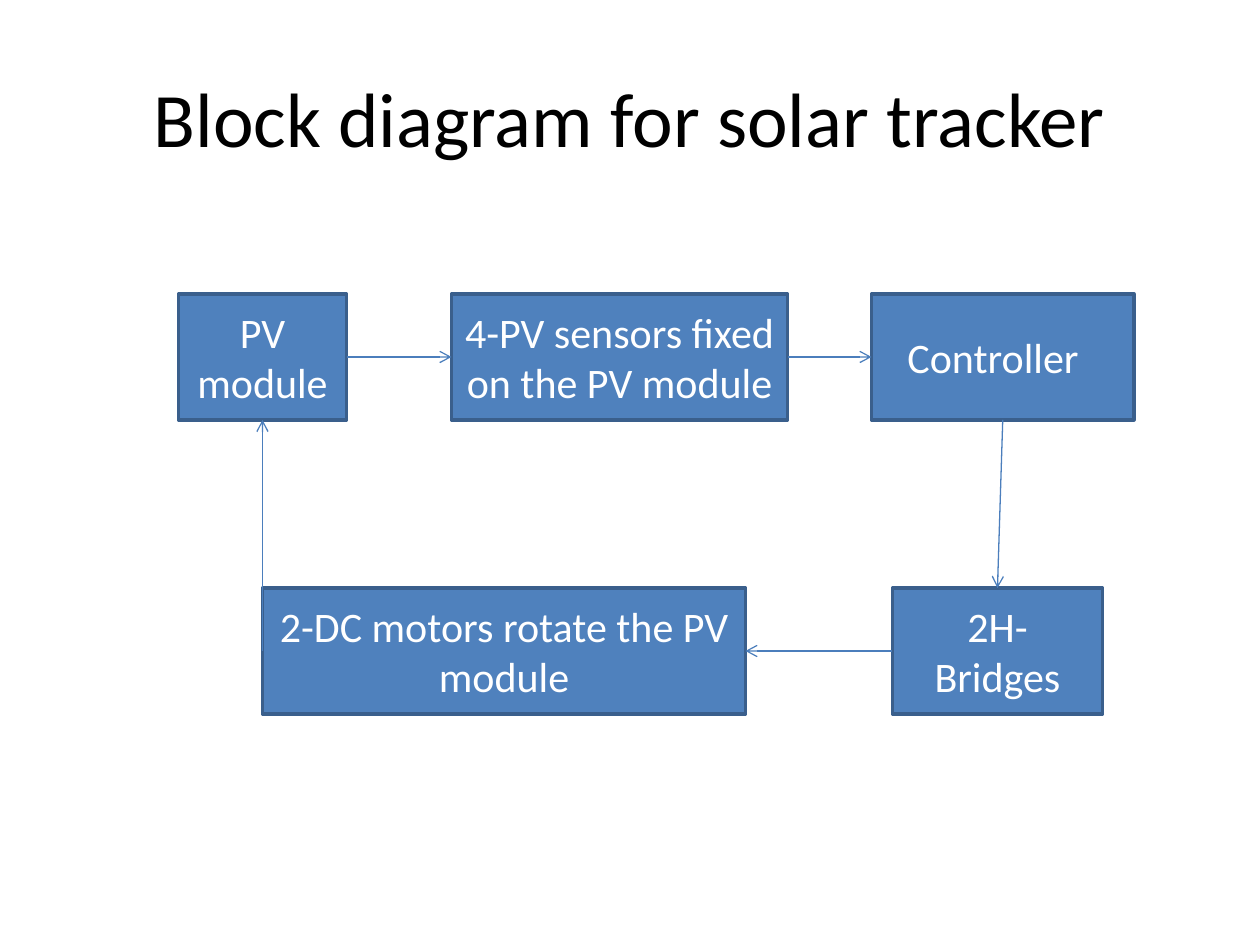
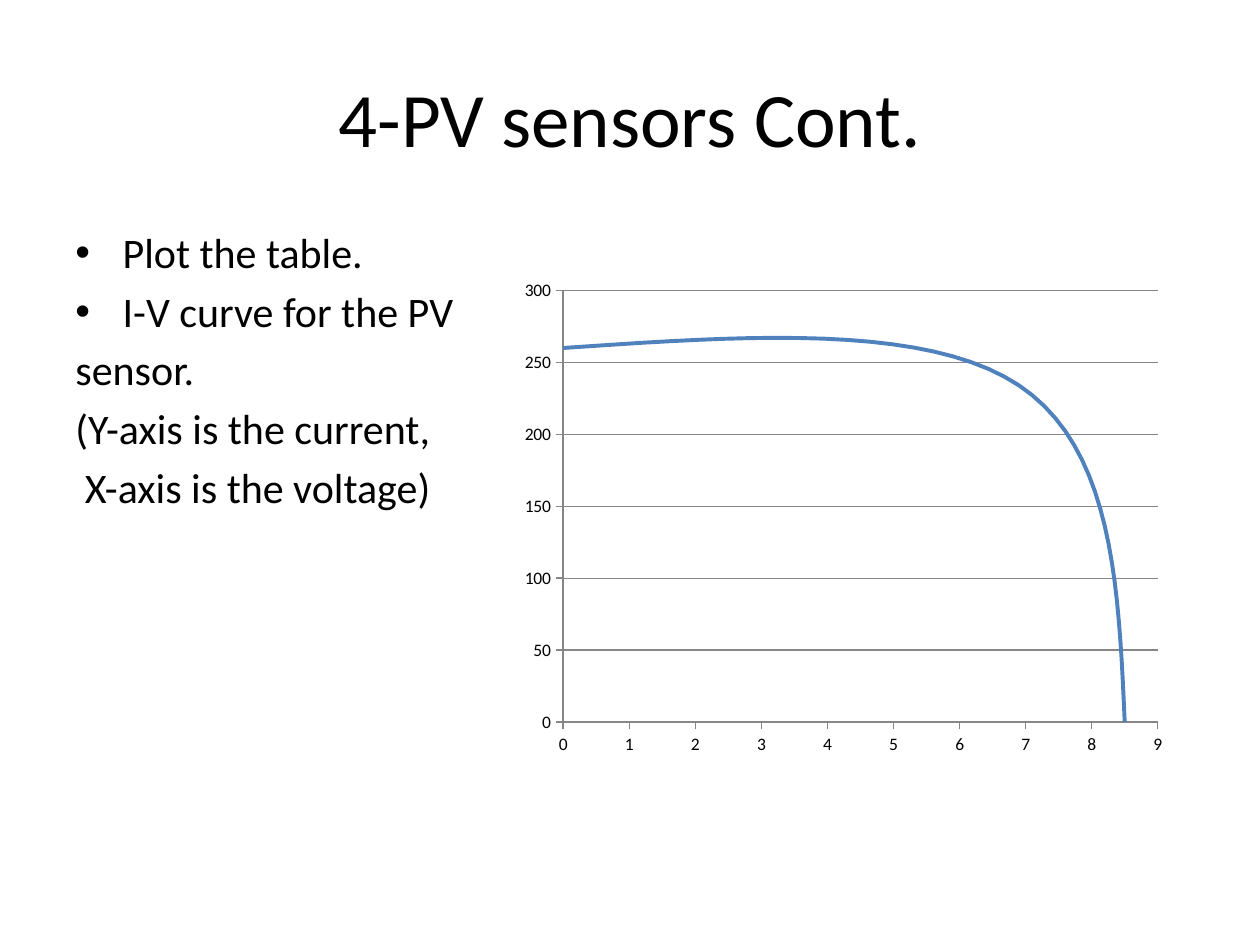
from dataclasses import dataclass

from lxml.etree import SubElement
from pptx import Presentation
from pptx.chart.data import XyChartData
from pptx.dml.color import RGBColor as RGB
from pptx.enum.chart import XL_CHART_TYPE as ChartType, XL_TICK_MARK as TickMark
from pptx.enum.shapes import MSO_CONNECTOR as Connector, MSO_SHAPE as Shape
from pptx.enum.text import MSO_ANCHOR as Anchor, PP_ALIGN as Align
from pptx.oxml.ns import qn
from pptx.util import Pt


@dataclass(frozen=True)
class Theme:
    font: str = "Calibri"
    bullet_font: str = "Arial"
    title_size: int = 44
    body_size: int = 24
    chart_size: int = 10
    text: RGB = RGB(0, 0, 0)
    block_text: RGB = RGB(255, 255, 255)
    block: RGB = RGB.from_string("4F81BD")
    block_edge: RGB = RGB.from_string("3A5F8C")
    arrow: RGB = RGB.from_string("4B7EBC")
    axis: RGB = RGB.from_string("868686")


THEME = Theme()
TOP, LEFT, BOTTOM, RIGHT = range(4)

DIAGRAM_TITLE = "Block diagram for solar tracker"
BLOCK_HEIGHT = 72
ROW_TOPS = (168, 336)
# name: (text, row, left, width)
BLOCKS = {
    "module": ("PV module", 0, 102, 96),
    "sensors": ("4-PV sensors fixed on the PV module", 0, 258, 192),
    "controller": ("Controller", 0, 498, 150),
    "bridges": ("2H-Bridges", 1, 510, 120),
    "motors": ("2-DC motors rotate the PV module", 1, 150, 276),
}
ARROWS = [
    ("module", RIGHT, "sensors", LEFT),
    ("sensors", RIGHT, "controller", LEFT),
    ("controller", BOTTOM, "bridges", TOP),
    ("bridges", LEFT, "motors", RIGHT),
    ("motors", LEFT, "module", BOTTOM),
]

SENSORS_TITLE = "4-PV sensors Cont."
HANGING = 27
# (text, bulleted, start of the first line)
NOTES = [
    ("Plot the table.", True, 0),
    ("I-V curve for the PV", True, 0),
    ("sensor.", False, 0),
    ("(Y-axis is the current,", False, 0),
    ("X-axis is the voltage)", False, 5.4),
]
IV_POINTS = [(0, 260), (6.9, 234), (8.5, 0)]
PLOT_AREA = {"x": 0.088, "y": 0.072, "w": 0.885, "h": 0.806}


def style_font(font, size, color):
    font.name, font.size, font.color.rgb = THEME.font, Pt(size), color


def add_page(deck, title):
    page = deck.slides.add_slide(deck.slide_layouts[6])
    box = page.shapes.add_textbox(Pt(36), Pt(21.6), Pt(648), Pt(90))
    fill_centred(box.text_frame, title, THEME.title_size, THEME.text)
    return page


def fill_centred(frame, text, size, color):
    frame.word_wrap = True
    frame.vertical_anchor = Anchor.MIDDLE
    para = frame.paragraphs[0]
    para.text = text
    para.alignment = Align.CENTER
    style_font(para.font, size, color)


def add_block(page, text, row, left, width):
    box = page.shapes.add_shape(Shape.RECTANGLE, Pt(left), Pt(ROW_TOPS[row]),
                                Pt(width), Pt(BLOCK_HEIGHT))
    box.shadow.inherit = False
    box.fill.solid()
    box.fill.fore_color.rgb = THEME.block
    box.line.color.rgb = THEME.block_edge
    box.line.width = Pt(2)
    fill_centred(box.text_frame, text, THEME.body_size, THEME.block_text)
    return box


def add_arrow(page, start, start_side, end, end_side):
    arrow = page.shapes.add_connector(Connector.STRAIGHT, 0, 0, 0, 0)
    arrow.begin_connect(start, start_side)
    arrow.end_connect(end, end_side)
    arrow.line.color.rgb = THEME.arrow
    arrow.line.width = Pt(0.75)
    SubElement(arrow.line._get_or_add_ln(), qn("a:tailEnd"), type="arrow")
    SubElement(arrow._element.spPr, qn("a:effectLst"))


def add_notes(page):
    box = page.shapes.add_textbox(Pt(36), Pt(126), Pt(648), Pt(356.4))
    frame = box.text_frame
    frame.word_wrap = True
    for index, (text, bulleted, start) in enumerate(NOTES):
        para = frame.add_paragraph() if index else frame.paragraphs[0]
        para.text = text
        para.space_before = Pt(4.7)
        style_font(para.font, THEME.body_size, THEME.text)
        props = para._p.get_or_add_pPr()
        props.set("marL", str(Pt(HANGING)))
        props.set("indent", str(Pt(start - HANGING)))
        if bulleted:
            run_defaults = props.find(qn("a:defRPr"))
            for tag, attributes in (("a:buFont", {"typeface": THEME.bullet_font}),
                                    ("a:buChar", {"char": "•"})):
                run_defaults.addprevious(props.makeelement(qn(tag), attributes))


def place_plot(chart):
    """Fix the inner plot area as fractions of the chart frame."""
    plot_area = chart._chartSpace.chart.plotArea
    layout = plot_area.find(qn("c:layout"))
    if layout is None:
        layout = plot_area.makeelement(qn("c:layout"), {})
        plot_area.insert(0, layout)
    manual = SubElement(layout, qn("c:manualLayout"))
    settings = {"layoutTarget": "inner", "xMode": "edge", "yMode": "edge", **PLOT_AREA}
    for name, value in settings.items():
        SubElement(manual, qn(f"c:{name}"), val=str(value))


def smooth_curve(curve):
    """Turn on smoothing, which scatter series do not offer as a property."""
    smooth = curve._element.find(qn("c:smooth"))
    if smooth is None:
        smooth = SubElement(curve._element, qn("c:smooth"))
    smooth.set("val", "1")


def style_axis(axis, maximum, step, gridlines):
    axis.minimum_scale, axis.maximum_scale, axis.major_unit = 0, maximum, step
    axis.major_tick_mark = TickMark.OUTSIDE
    axis.minor_tick_mark = TickMark.NONE
    axis.has_major_gridlines = gridlines
    lines = [axis.format.line]
    if gridlines:
        lines.append(axis.major_gridlines.format.line)
    for line in lines:
        line.color.rgb = THEME.axis
        line.width = Pt(0.75)
    axis.tick_labels.number_format = "General"
    axis.tick_labels.number_format_is_linked = False


def add_iv_chart(page):
    data = XyChartData()
    points = data.add_series("Series 1")
    for voltage, current in IV_POINTS:
        points.add_data_point(voltage, current)
    chart = page.shapes.add_chart(ChartType.XY_SCATTER_SMOOTH_NO_MARKERS, Pt(288), Pt(144),
                                  Pt(384), Pt(306), data).chart
    chart.has_title = chart.has_legend = False
    style_font(chart.font, THEME.chart_size, THEME.text)
    chart.plots[0].vary_by_categories = False
    curve = chart.plots[0].series[0]
    smooth_curve(curve)
    curve.format.line.color.rgb = THEME.block
    curve.format.line.width = Pt(2.25)
    style_axis(chart.category_axis, 9, 1, False)
    style_axis(chart.value_axis, 300, 50, True)
    place_plot(chart)


def main():
    deck = Presentation()
    deck.slide_width, deck.slide_height = Pt(720), Pt(540)

    diagram = add_page(deck, DIAGRAM_TITLE)
    blocks = {name: add_block(diagram, *block) for name, block in BLOCKS.items()}
    # A wider right inset sets the controller's label left of centre.
    label = blocks["controller"].text_frame
    label.margin_left, label.margin_right = Pt(5), Pt(16)
    for start, start_side, end, end_side in ARROWS:
        add_arrow(diagram, blocks[start], start_side, blocks[end], end_side)

    sensors = add_page(deck, SENSORS_TITLE)
    add_notes(sensors)
    add_iv_chart(sensors)
    deck.save("out.pptx")


if __name__ == "__main__":
    main()
